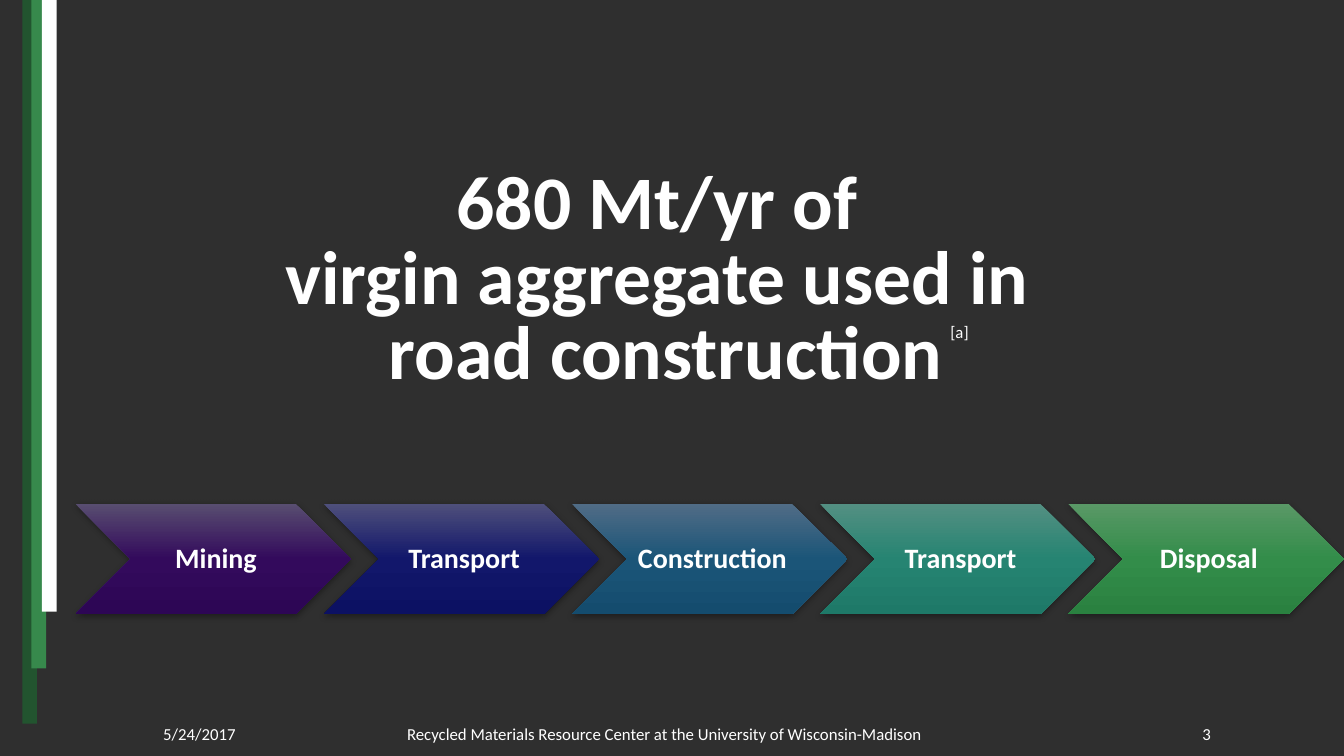
from copy import deepcopy
from dataclasses import dataclass

from lxml.etree import SubElement
from pptx import Presentation
from pptx.dml.color import RGBColor as Color
from pptx.enum.shapes import MSO_SHAPE as Preset
from pptx.enum.text import MSO_ANCHOR as Anchor, PP_ALIGN as Align
from pptx.oxml.ns import qn
from pptx.util import Pt


@dataclass(frozen=True)
class Theme:
    font: str = "Calibri"
    ground: str = "2F2F2F"
    ink: str = "FFFFFF"
    dark_green: str = "22542F"
    green: str = "37894C"
    shadow: str = "000000"
    mining: tuple = ("584D70", "330A5C", "2D0655")
    supply: tuple = ("4E4F7B", "12176B", "0C1163")
    construction: tuple = ("506C86", "1B5578", "144C6E")
    removal: tuple = ("538F82", "268472", "1E7968")
    disposal: tuple = ("599866", "338D4A", "2A8140")
    title_size: int = 54
    stage_size: int = 20
    small_size: int = 12


def apply(target, values):
    for name, value in values.items():
        setattr(target, name, value)


class SlideBuilder:
    def __init__(self, page, theme):
        self.page = page
        self.theme = theme
        fill = page.background.fill
        fill.solid()
        fill.fore_color.rgb = Color.from_string(theme.ground)

    def fill_text(self, box, lines, size, bold=False, align=Align.LEFT,
                  anchor=Anchor.MIDDLE, spacing=1.0, margins=(7.2, 3.6, 7.2, 3.6)):
        frame = box.text_frame
        left, top, right, bottom = map(Pt, margins)
        apply(frame, {"word_wrap": True, "vertical_anchor": anchor,
                      "margin_left": left, "margin_top": top,
                      "margin_right": right, "margin_bottom": bottom})
        for index, line in enumerate(lines):
            para = frame.add_paragraph() if index else frame.paragraphs[0]
            apply(para, {"alignment": align, "line_spacing": spacing})
            span = para.add_run()
            span.text = line
            apply(span.font, {"name": self.theme.font, "size": Pt(size), "bold": bold})
            span.font.color.rgb = Color.from_string(self.theme.ink)

    def text(self, bounds, lines, size, **style):
        box = self.page.shapes.add_textbox(*map(Pt, bounds))
        self.fill_text(box, lines, size, **style)

    def shape(self, preset, bounds):
        shape = self.page.shapes.add_shape(preset, *map(Pt, bounds))
        shape.shadow.inherit = False
        shape.line.fill.background()
        return shape

    def bar(self, bounds, color):
        fill = self.shape(Preset.RECTANGLE, bounds).fill
        fill.solid()
        fill.fore_color.rgb = Color.from_string(color)

    def chevron(self, bounds, label, colors):
        shape = self.shape(Preset.CHEVRON, bounds)
        self.shade(shape, colors)
        self.drop_shadow(shape)
        self.fill_text(shape, [label], self.theme.stage_size, bold=True,
                       align=Align.CENTER, spacing=0.9, margins=(6, 2, 2, 2))

    def shade(self, shape, colors):
        fill = shape.fill
        fill.gradient()
        fill.gradient_angle = 270
        stops = shape.element.spPr.find(".//" + qn("a:gsLst"))
        stops.append(deepcopy(stops[-1]))
        for index, (stop, color) in enumerate(zip(fill.gradient_stops, colors)):
            stop.position = index / 2
            stop.color.rgb = Color.from_string(color)

    def drop_shadow(self, shape):
        effects = shape.element.spPr.find(qn("a:effectLst"))
        shadow = SubElement(effects, qn("a:outerShdw"), blurRad=str(Pt(4.5)),
                            dist=str(Pt(1.5)), dir="5400000", rotWithShape="0")
        color = SubElement(shadow, qn("a:srgbClr"), val=self.theme.shadow)
        SubElement(color, qn("a:alpha"), val="35000")


def main():
    deck = Presentation()
    apply(deck, {"slide_width": Pt(960), "slide_height": Pt(540)})
    theme = Theme()
    slide = SlideBuilder(deck.slides.add_slide(deck.slide_layouts[6]), theme)

    slide.bar((16, -0.5, 10.5, 517.5), theme.dark_green)
    slide.bar((22.5, -0.5, 10.5, 478), theme.green)
    slide.bar((30, 0, 10.5, 437), theme.ink)

    footer = [
        (109.5, 95, "5/24/2017", Align.LEFT),
        (227.5, 494.5, "Recycled Materials Resource Center at the University of Wisconsin-Madison",
         Align.CENTER),
        (746, 126, "3", Align.RIGHT),
    ]
    for left, width, line, align in footer:
        slide.text((left, 508.5, width, 31.5), [line], theme.small_size, align=align)

    slide.text((97, 105, 757, 180.5),
               ["680 Mt/yr of ", "virgin aggregate used in ", "road construction"],
               theme.title_size, bold=True, align=Align.CENTER,
               anchor=Anchor.BOTTOM, spacing=0.83)

    stages = [
        ("Mining", theme.mining),
        ("Transport", theme.supply),
        ("Construction", theme.construction),
        ("Transport", theme.removal),
        ("Disposal", theme.disposal),
    ]
    for index, (label, colors) in enumerate(stages):
        slide.chevron((54 + 177.3 * index, 360, 196.6, 78.6), label, colors)

    slide.text((664.5, 226, 34.5, 21.5), ["[a]"], theme.small_size,
               align=Align.RIGHT, anchor=Anchor.TOP)

    deck.save("out.pptx")


if __name__ == "__main__":
    main()
